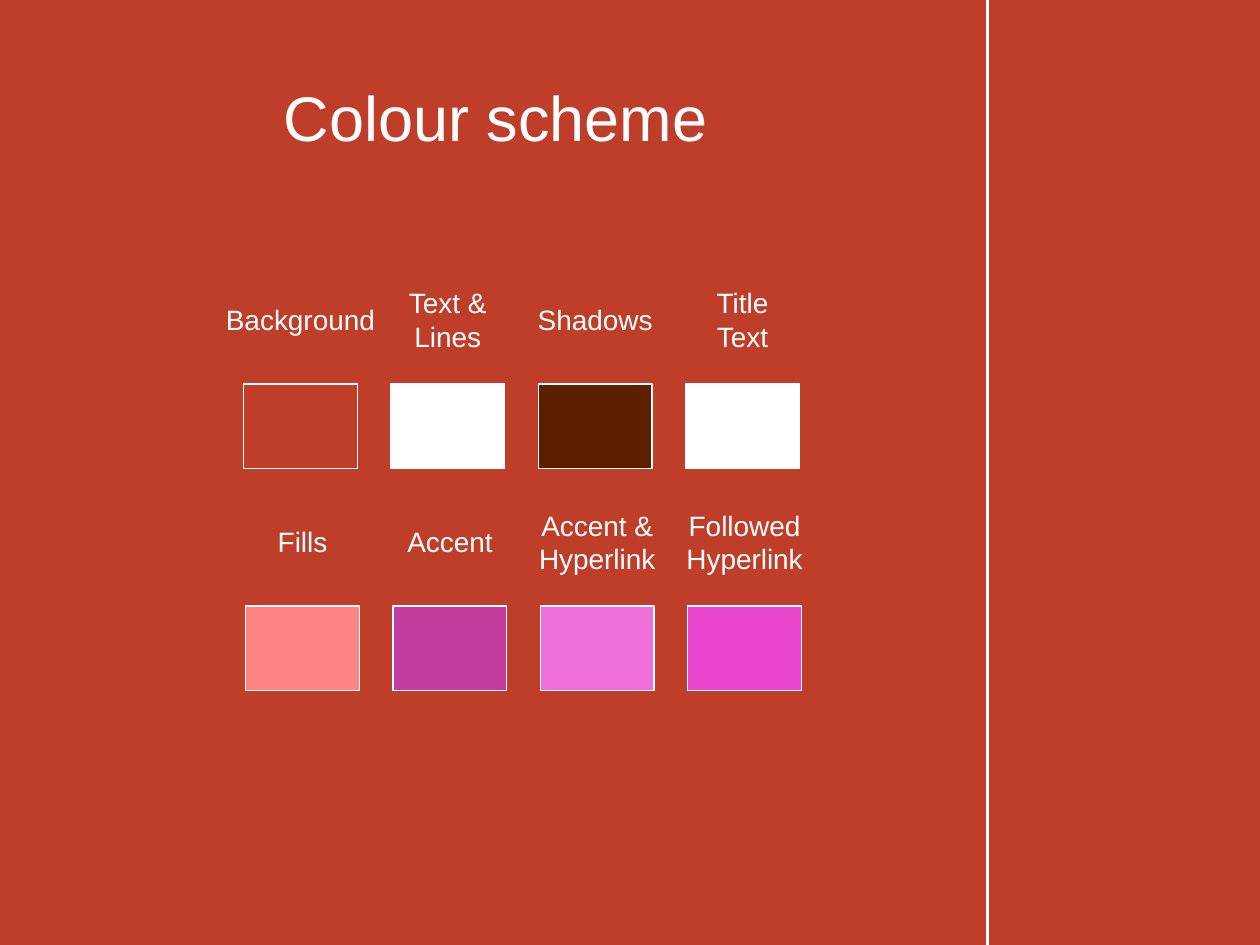
from pptx import Presentation
from pptx.dml.color import RGBColor
from pptx.enum.shapes import MSO_CONNECTOR, MSO_SHAPE
from pptx.enum.text import MSO_ANCHOR, MSO_AUTO_SIZE, PP_ALIGN
from pptx.util import Pt
from lxml.etree import SubElement
from pptx.oxml.ns import qn

RUST = RGBColor(0xBF, 0x3E, 0x29)
WHITE = RGBColor(0xFF, 0xFF, 0xFF)
BROWN = RGBColor(0x5C, 0x1F, 0x00)
SALMON = RGBColor(0xFF, 0x85, 0x85)
PURPLE = RGBColor(0xC3, 0x3D, 0x9E)
PINK = RGBColor(0xEE, 0x6F, 0xDA)
MAGENTA = RGBColor(0xE9, 0x45, 0xCE)

TITLE = "Colour scheme"
ROWS = [
    (139.2, 219.4, [
        ("Background", 100, RUST),
        ("Text &\nLines", 60.5, WHITE),
        ("Shadows", 80, BROWN),
        ("Title\vText", 45.5, WHITE),
    ]),
    (140.4, 346.4, [
        ("Fills", 42.5, SALMON),
        ("Accent", 63.4, PURPLE),
        ("Accent &\nHyperlink", 80.6, PINK),
        ("Followed\nHyperlink", 80.6, MAGENTA),
    ]),
]
SWATCH_WIDTH, SWATCH_HEIGHT = 65, 48.2
COLUMN_STEP = 84.2
LABEL_RISE = 36.9
LINE_HEIGHT, LABEL_PADDING = 19.2, 7.2
DIVIDER_X = 564.2


def add_text(slide, text, left, top, width, height, size):
    box = slide.shapes.add_textbox(Pt(left), Pt(top), Pt(width), Pt(height))
    frame = box.text_frame
    frame.text = text
    frame.vertical_anchor = MSO_ANCHOR.MIDDLE
    for paragraph in frame.paragraphs:
        paragraph.alignment = PP_ALIGN.CENTER
        paragraph.font.name = "Arial"
        paragraph.font.size = Pt(size)
        paragraph.font.color.rgb = WHITE
    return frame


def add_swatch(slide, left, top, colour):
    swatch = slide.shapes.add_shape(
        MSO_SHAPE.RECTANGLE, Pt(left), Pt(top), Pt(SWATCH_WIDTH), Pt(SWATCH_HEIGHT))
    swatch.shadow.inherit = False
    swatch.fill.solid()
    swatch.fill.fore_color.rgb = colour
    swatch.line.color.rgb = WHITE
    swatch.line.width = Pt(0.75)


def add_label(slide, text, centre, middle, width):
    height = len(text.splitlines()) * LINE_HEIGHT + LABEL_PADDING
    frame = add_text(
        slide, text, centre - width / 2, middle - height / 2, width, height, 16)
    frame.margin_left = frame.margin_right = Pt(2)
    frame.word_wrap = False
    frame.auto_size = MSO_AUTO_SIZE.SHAPE_TO_FIT_TEXT


def main():
    deck = Presentation()
    deck.slide_width, deck.slide_height = Pt(720), Pt(540)
    slide = deck.slides.add_slide(deck.slide_layouts[6])
    slide.background.fill.solid()
    slide.background.fill.fore_color.rgb = RUST

    divider = slide.shapes.add_connector(
        MSO_CONNECTOR.STRAIGHT, Pt(DIVIDER_X), Pt(0), Pt(DIVIDER_X), deck.slide_height)
    divider.line.color.rgb = WHITE
    divider.line.width = Pt(1.5)
    SubElement(divider._element.spPr, qn("a:effectLst"))

    title = add_text(slide, TITLE, 19.8, 21.6, 527, 90, 36)
    title.word_wrap = True

    for row_left, top, entries in ROWS:
        for column, (text, width, colour) in enumerate(entries):
            left = row_left + column * COLUMN_STEP
            add_swatch(slide, left, top, colour)
            add_label(slide, text, left + SWATCH_WIDTH / 2, top - LABEL_RISE, width)

    deck.save("out.pptx")


if __name__ == "__main__":
    main()
